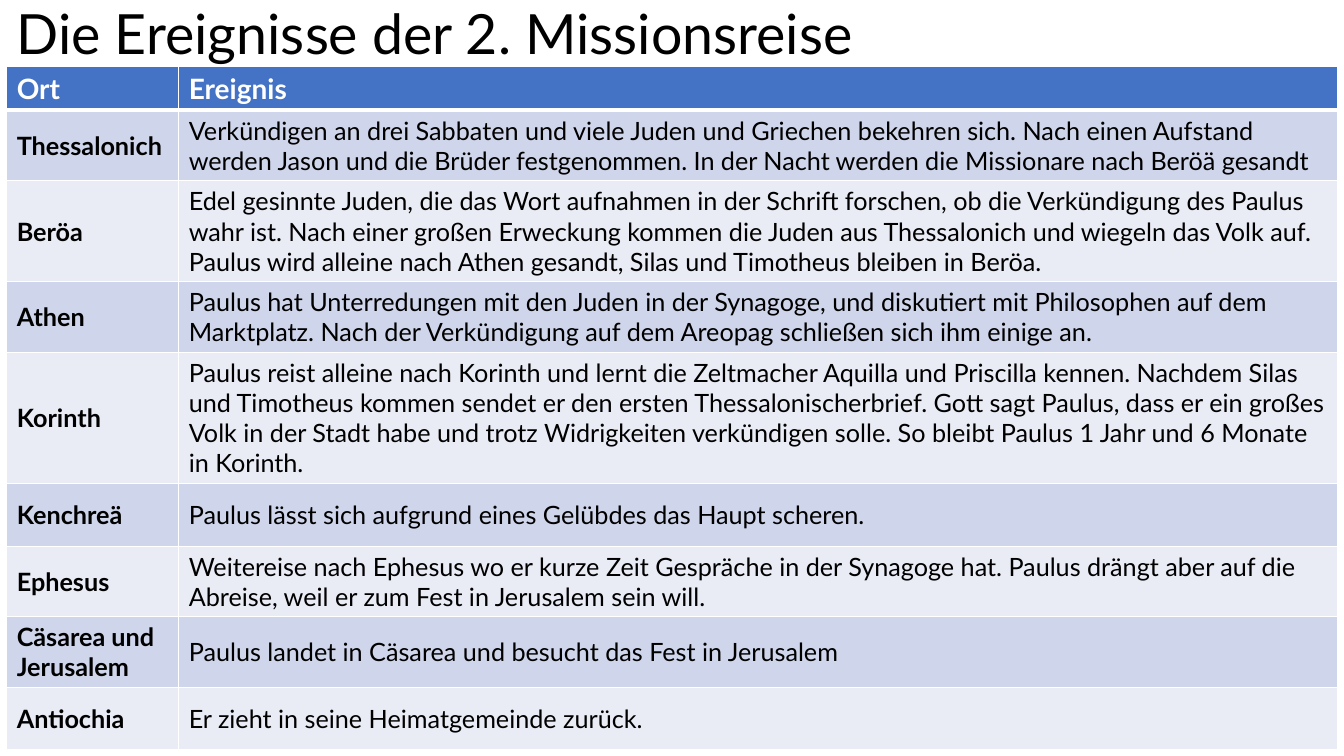
import pptx
import pptx.util
import pptx.dml.color
import pptx.enum.text
import pptx.oxml
import pptx.oxml.ns

MIDDLE = pptx.enum.text.MSO_ANCHOR.MIDDLE
BANDS = ("CFD5EA", "E9EBF5")
HEADINGS = ("Ort", "Ereignis")
COLUMN_SHARES = (12.8, 86.2)
HEADER_SHARE, TALL_SHARE, ROW_SHARE = 4.1, 9.3, 8.3

STATIONS = [
    ("Thessalonich", "Verkündigen an drei Sabbaten und viele Juden und Griechen bekehren sich. "
     "Nach einen Aufstand werden Jason und die Brüder festgenommen. "
     "In der Nacht werden die Missionare nach Beröä gesandt"),
    ("Beröa", "Edel gesinnte Juden, die das Wort aufnahmen in der Schrift forschen, "
     "ob die Verkündigung des Paulus wahr ist. Nach einer großen Erweckung kommen die Juden "
     "aus Thessalonich und wiegeln das Volk auf. Paulus wird alleine nach Athen gesandt, "
     "Silas und Timotheus bleiben in Beröa."),
    ("Athen", "Paulus hat Unterredungen mit den Juden in der Synagoge, und diskutiert mit "
     "Philosophen auf dem Marktplatz. Nach der Verkündigung auf dem Areopag schließen sich "
     "ihm einige an."),
    ("Korinth", "Paulus reist alleine nach Korinth und lernt die Zeltmacher Aquilla und "
     "Priscilla kennen. Nachdem Silas und Timotheus kommen sendet er den ersten "
     "Thessalonischerbrief. Gott sagt Paulus, dass er ein großes Volk in der Stadt habe und "
     "trotz Widrigkeiten verkündigen solle. So bleibt Paulus 1 Jahr und 6 Monate in Korinth."),
    ("Kenchreä", "Paulus lässt sich aufgrund eines Gelübdes das Haupt scheren."),
    ("Ephesus", "Weitereise nach Ephesus wo er kurze Zeit Gespräche in der Synagoge hat. "
     "Paulus drängt aber auf die Abreise, weil er zum Fest in Jerusalem sein will."),
    ("Cäsarea und Jerusalem", "Paulus landet in Cäsarea und besucht das Fest in Jerusalem"),
    ("Antiochia", "Er zieht in seine Heimatgemeinde zurück."),
]


def color(value):
    return pptx.dml.color.RGBColor.from_string(value)


class JourneySlide:
    font_name = "Lato"

    def __init__(self, deck):
        self.width, self.height = deck.slide_width, deck.slide_height
        self.slide = deck.slides.add_slide(deck.slide_layouts[6])

    def across(self, percent):
        return round(self.width * percent / 100)

    def down(self, percent):
        return round(self.height * percent / 100)

    def place(self, left, top, width, height):
        return self.across(left), self.down(top), self.across(width), self.down(height)

    def wording(self, frame, text, size, ink, bold=False):
        run = frame.paragraphs[0].add_run()
        run.text = text
        style = {"name": self.font_name, "size": pptx.util.Pt(size), "bold": bold}
        for attribute, value in style.items():
            setattr(run.font, attribute, value)
        run.font.color.rgb = color(ink)

    def title(self, text, area):
        frame = self.slide.shapes.add_textbox(*self.place(*area)).text_frame
        for attribute, value in {"word_wrap": True, "vertical_anchor": MIDDLE}.items():
            setattr(frame, attribute, value)
        frame.paragraphs[0].line_spacing = 0.9
        self.wording(frame, text, 39.6, "000000")

    def border(self, cell, edge, points):
        cell._tc.get_or_add_tcPr().append(pptx.oxml.parse_xml(
            f'<a:ln{edge} {pptx.oxml.ns.nsdecls("a")} w="{pptx.util.Pt(points)}">'
            f'<a:solidFill><a:srgbClr val="FFFFFF"/></a:solidFill></a:ln{edge}>'))

    def cell(self, cell, text, fill, edges, **text_style):
        for edge, points in edges.items():
            self.border(cell, edge, points)
        cell.fill.solid()
        cell.fill.fore_color.rgb = color(fill)
        cell.vertical_anchor = MIDDLE
        self.wording(cell.text_frame, text, **text_style)

    def table(self, headings, entries, left, top, column_shares, row_shares):
        area = self.place(left, top, sum(column_shares), sum(row_shares))
        table = self.slide.shapes.add_table(len(row_shares), len(column_shares), *area).table
        for column, share in zip(table.columns, column_shares):
            column.width = self.across(share)
        for row, share in zip(table.rows, row_shares):
            row.height = self.down(share)
        for c, heading in enumerate(headings):
            self.cell(table.cell(0, c), heading, "4472C4", {"L": 1, "R": 1, "T": 1, "B": 3},
                      size=20, ink="FFFFFF", bold=True)
        for r, entry in enumerate(entries, 1):
            for c, text in enumerate(entry):
                self.cell(table.cell(r, c), text, BANDS[(r - 1) % 2],
                          {"L": 1, "R": 1, "B": 1}, size=18, ink="000000", bold=c == 0)


def main():
    deck = pptx.Presentation()
    deck.slide_width = pptx.util.Inches(13.33)
    deck.slide_height = pptx.util.Inches(7.5)
    journey = JourneySlide(deck)
    journey.title("Die Ereignisse der 2. Missionsreise", (0.5, 0, 90, 9.7))
    row_shares = [HEADER_SHARE] + [TALL_SHARE] * 2 + [ROW_SHARE] * (len(STATIONS) - 2)
    journey.table(HEADINGS, STATIONS, 0.5, 8.8, COLUMN_SHARES, row_shares)
    deck.save("out.pptx")


if __name__ == "__main__":
    main()
